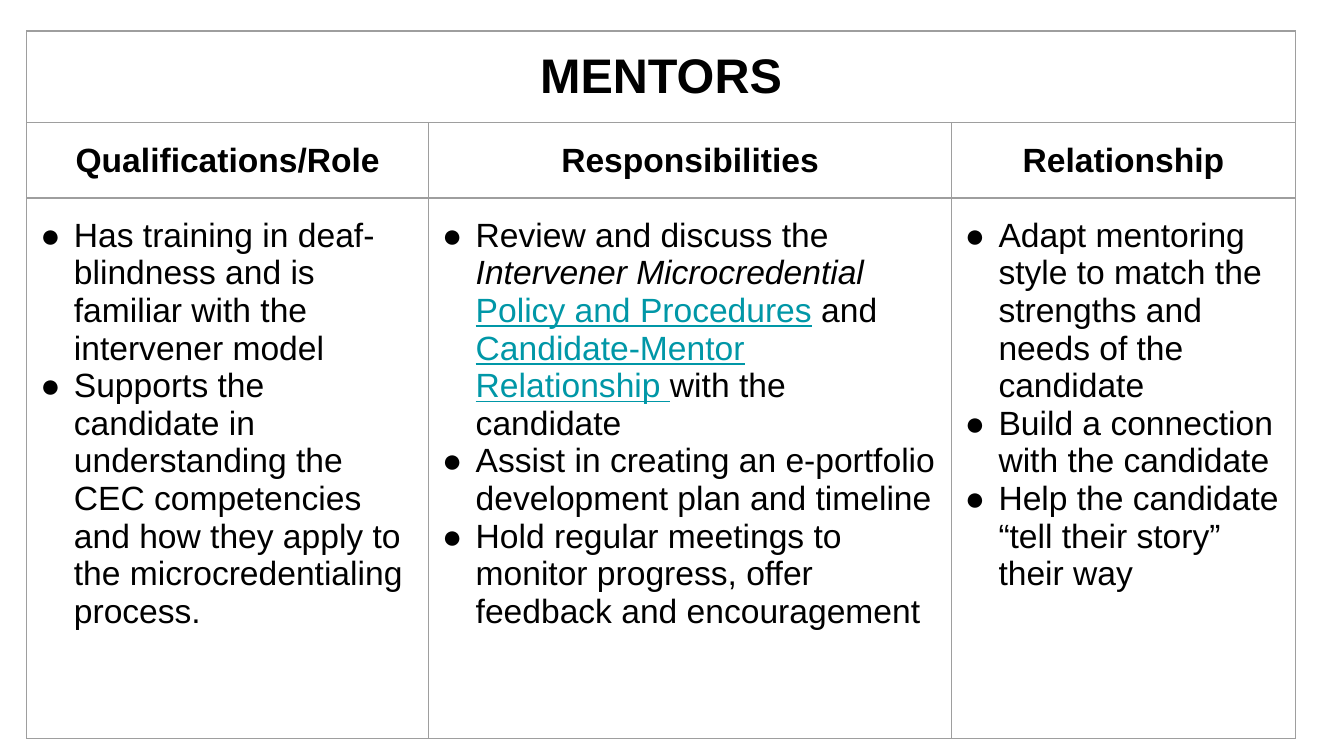
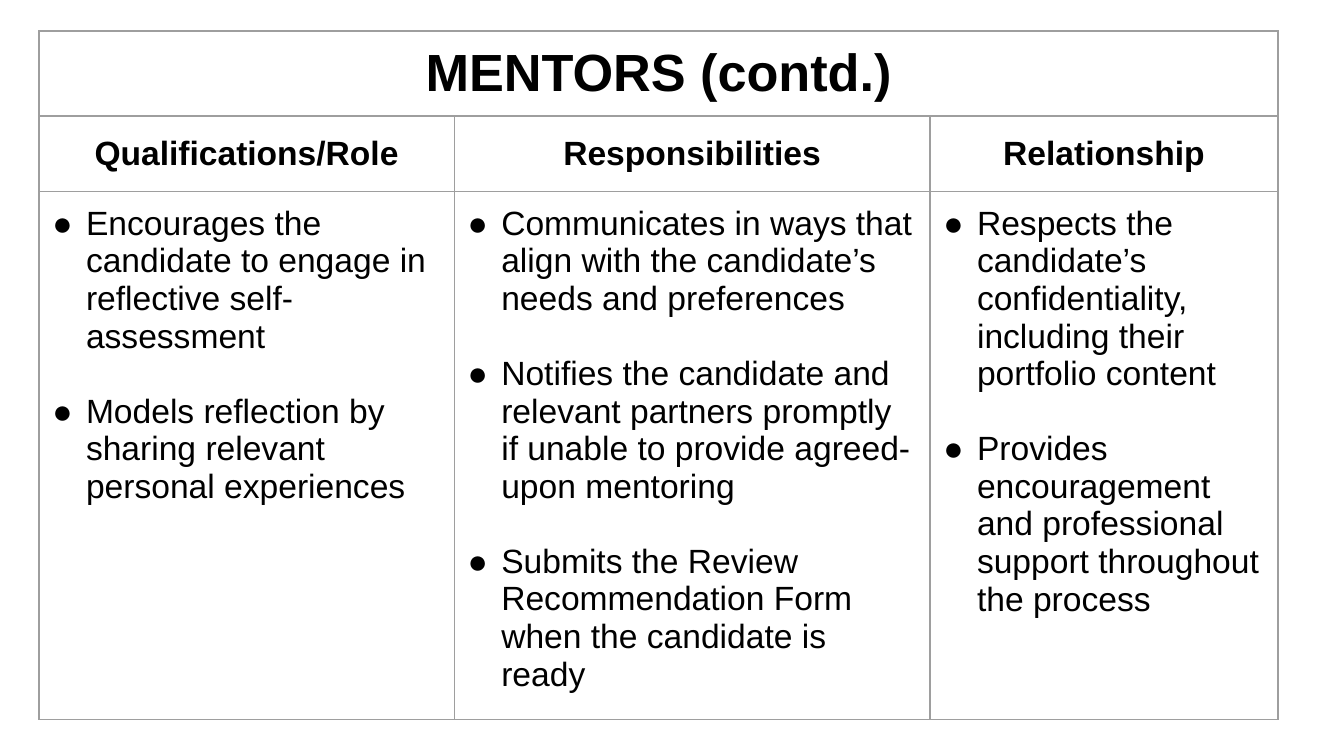
import pptx
import pptx.dml.color
import pptx.enum.text
import pptx.oxml.ns
import pptx.util
from dataclasses import dataclass
from lxml import etree

Inches = pptx.util.Inches
Pt = pptx.util.Pt
ALIGN = pptx.enum.text.PP_ALIGN


@dataclass(frozen=True)
class Theme:
    font: str = "Arial"
    ink: str = "000000"
    link: str = "0097A7"
    border: str = "9E9E9E"
    border_width: float = 0.75
    text_size: int = 18
    indent: float = 0.25
    side_inset: float = 0.1
    tall_inset: float = 0.14


THEME = Theme()
HEADINGS = ["Qualifications/Role", "Responsibilities", "Relationship"]

# A bullet is a string, or a list of (text, style) pairs
MENTORS = [
    ["Has training in deaf-blindness and is familiar with the intervener model",
     "Supports the candidate in understanding the CEC competencies and how they "
     "apply to the microcredentialing process."],
    [[("Review and discuss the ", "plain"),
      ("Intervener Microcredential ", "italic"),
      ("Policy and Procedures", "link"),
      (" and ", "plain"),
      ("Candidate-Mentor Relationship ", "link"),
      ("with the candidate", "plain")],
     "Assist in creating an e-portfolio development plan and timeline",
     "Hold regular meetings to monitor progress, offer feedback and encouragement"],
    ["Adapt mentoring style to match the strengths and needs of the candidate",
     "Build a connection with the candidate",
     "Help the candidate “tell their story” their way"],
]
MENTORS_CONTINUED = [
    ["Encourages the candidate to engage in reflective self-assessment",
     "Models reflection by sharing relevant personal experiences"],
    ["Communicates in ways that align with the candidate’s needs and preferences",
     "Notifies the candidate and relevant partners promptly if unable to provide "
     "agreed-upon mentoring",
     "Submits the Review Recommendation Form when the candidate is ready"],
    ["Respects the candidate’s confidentiality, including their portfolio content",
     "Provides encouragement and professional support throughout the process"],
]


def rgb(value):
    return pptx.dml.color.RGBColor.from_string(value)


def add_child(parent, tag, **attributes):
    return etree.SubElement(parent, pptx.oxml.ns.qn(tag), attributes)


def style_cell(cell, inset):
    """Give a cell its margins, thin border and empty fill."""
    cell.margin_left = cell.margin_right = Inches(THEME.side_inset)
    cell.margin_top = cell.margin_bottom = Inches(inset)
    properties = cell._tc.get_or_add_tcPr()
    for side in ("a:lnL", "a:lnR", "a:lnT", "a:lnB"):
        line = add_child(properties, side, w=str(Pt(THEME.border_width)))
        add_child(add_child(line, "a:solidFill"), "a:srgbClr", val=THEME.border)
    cell.fill.background()


def style_paragraph(para, size, bold):
    para.font.name = THEME.font
    para.font.size = Pt(size)
    para.font.bold = bold
    para.font.color.rgb = rgb(THEME.ink)


def write_heading(cell, text, size):
    para = cell.text_frame.paragraphs[0]
    para.text = text
    para.alignment = ALIGN.CENTER
    style_paragraph(para, size, True)


def add_bullet_mark(para):
    properties = para._p.get_or_add_pPr()
    properties.set("marL", str(Inches(THEME.indent)))
    properties.set("indent", str(-Inches(THEME.indent)))
    add_child(add_child(properties, "a:buClr"), "a:srgbClr", val=THEME.ink)
    add_child(properties, "a:buSzPts", val=str(THEME.text_size * 100))
    add_child(properties, "a:buFont", typeface=THEME.font)
    add_child(properties, "a:buChar", char="●")


def write_bullets(cell, bullets, gap):
    frame = cell.text_frame
    for index, bullet in enumerate(bullets):
        para = frame.add_paragraph() if index else frame.paragraphs[0]
        add_bullet_mark(para)
        para.alignment = ALIGN.LEFT
        if index:
            para.space_before = Pt(gap)
        style_paragraph(para, THEME.text_size, False)
        for text, style in [(bullet, "plain")] if isinstance(bullet, str) else bullet:
            span = para.add_run()
            span.text = text
            if style == "italic":
                span.font.italic = True
            elif style == "link":
                span.font.underline = True
                span.font.color.rgb = rgb(THEME.link)


def add_mentor_page(deck, box, widths, heights, title, title_size, columns, inset, gap):
    """Add a page with a title row, a heading row and a row of bullets."""
    page = deck.slides.add_slide(deck.slide_layouts[6])
    left, top = box
    table = page.shapes.add_table(
        len(heights), len(widths), Inches(left), Inches(top),
        Inches(sum(widths)), Inches(sum(heights))).table
    table.first_row = table.horz_banding = False
    for column, width in zip(table.columns, widths):
        column.width = Inches(width)
    for row, height, row_inset in zip(table.rows, heights,
                                      (inset, THEME.tall_inset, inset)):
        row.height = Inches(height)
        for cell in row.cells:
            style_cell(cell, row_inset)

    # Title across all columns
    table.cell(0, 0).merge(table.cell(0, len(widths) - 1))
    write_heading(table.cell(0, 0), title, title_size)

    # Headings and their bullets
    for index, (heading, bullets) in enumerate(zip(HEADINGS, columns)):
        write_heading(table.cell(1, index), heading, THEME.text_size)
        write_bullets(table.cell(2, index), bullets, gap)


def main():
    deck = pptx.Presentation()
    # Widescreen, 16 to 9
    deck.slide_width = Inches(10)
    deck.slide_height = Inches(10 * 9 / 16)
    add_mentor_page(deck, (0.2, 0.23), (2.99, 3.89, 2.56), (0.68, 0.55, 4.02),
                    "MENTORS", 26, MENTORS, inset=0.14, gap=0)
    add_mentor_page(deck, (0.29, 0.23), (3.09, 3.54, 2.59), (0.6, 0.51, 3.93),
                    "MENTORS (contd.)", 28, MENTORS_CONTINUED, inset=0.1, gap=20)
    deck.save("out.pptx")


if __name__ == "__main__":
    main()
